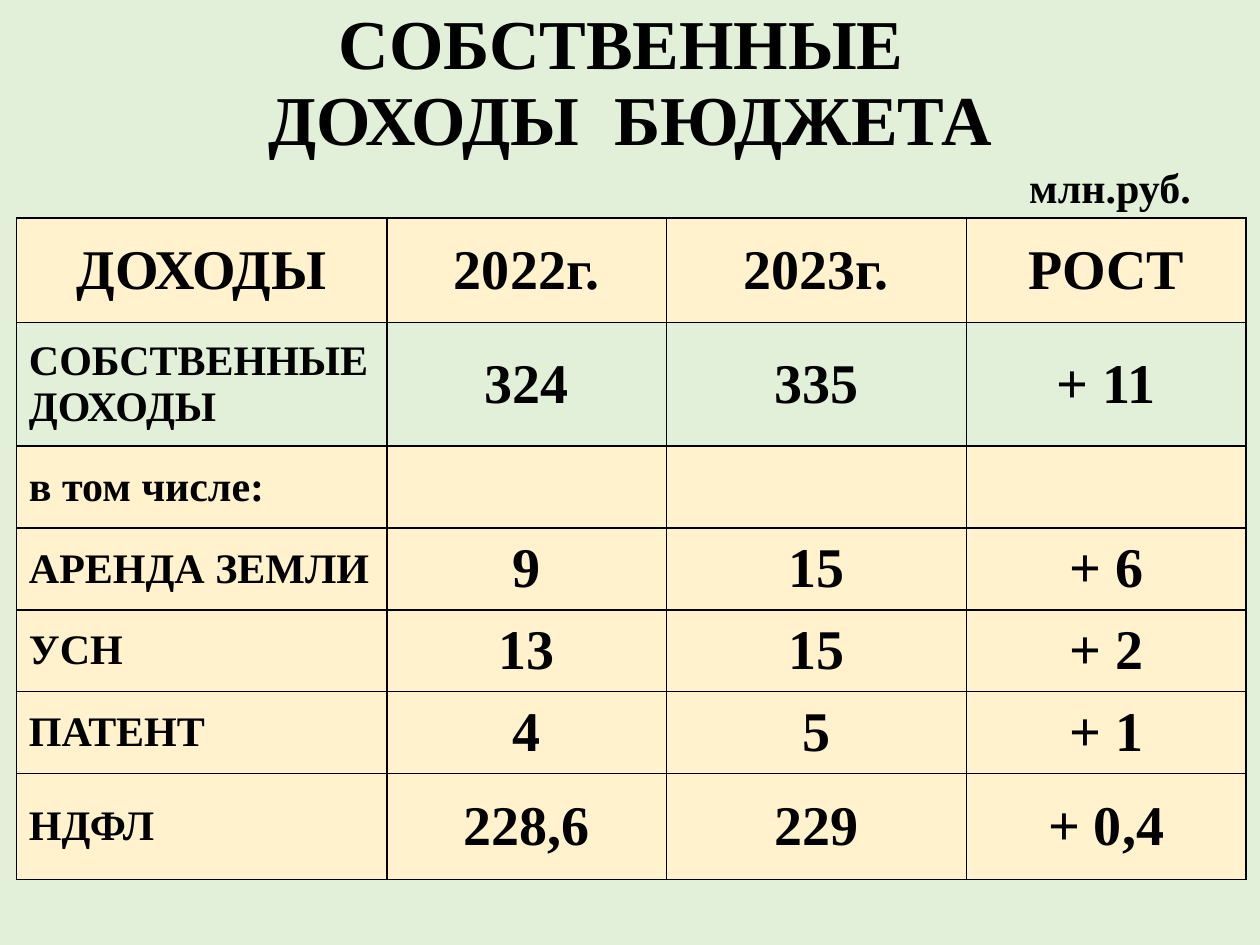
from lxml.etree import SubElement
from pptx import Presentation
from pptx.dml.color import RGBColor
from pptx.enum.text import MSO_ANCHOR as Anchor, MSO_AUTO_SIZE as AutoSize, PP_ALIGN as Align
from pptx.oxml.ns import qn
from pptx.util import Inches, Pt

TITLE = "СОБСТВЕННЫЕ \nДОХОДЫ  БЮДЖЕТА"
UNIT = "млн.руб."
INCOME = [
    ("ДОХОДЫ", "2022г.", "2023г.", "РОСТ"),
    ("СОБСТВЕННЫЕ ДОХОДЫ", "324", "335", "+ 11"),
    ("в том числе:", "", "", ""),
    ("АРЕНДА ЗЕМЛИ", "9", "15", "+ 6"),
    ("УСН", "13", "15", "+ 2"),
    ("ПАТЕНТ", "4", "5", "+ 1"),
    ("НДФЛ", "228,6", "229", "+ 0,4"),
]
HEADER_ROW, TOTAL_ROW = 0, 1
COLUMN_WIDTHS = [2.94, 2.22, 2.38, 2.22]
ROW_HEIGHTS = [0.83, 0.98, 0.65, 0.65, 0.65, 0.65, 0.84]
COLORS = {"green": "E2F0D9", "cream": "FFF2CC", "black": "000000"}
FONT = "Times New Roman"


def paint(fill, color):
    fill.solid()
    fill.fore_color.rgb = RGBColor.from_string(COLORS[color])


def write(frame, text, size=24, align=Align.LEFT, anchor=Anchor.MIDDLE, spacing=None):
    frame.vertical_anchor = anchor
    paragraph = frame.paragraphs[0]
    paragraph.text = text
    paragraph.alignment = align
    paragraph.line_spacing = spacing
    for run in paragraph.runs:
        run.font.name = FONT
        run.font.size = Pt(size)
        run.font.bold = True
        run.font.color.rgb = RGBColor.from_string(COLORS["black"])


def add_borders(cell):
    """Draw the four cell borders; call before filling, as lines precede the fill in XML."""
    properties = cell._tc.get_or_add_tcPr()
    for side in ("a:lnL", "a:lnR", "a:lnT", "a:lnB"):
        line = SubElement(properties, qn(side), w=str(Pt(1)))
        solid = SubElement(line, qn("a:solidFill"))
        SubElement(solid, qn("a:srgbClr"), val=COLORS["black"])


def add_income_table(slide):
    table = slide.shapes.add_table(
        len(INCOME), len(COLUMN_WIDTHS), Inches(0.13), Inches(1.73),
        Inches(sum(COLUMN_WIDTHS)), Inches(sum(ROW_HEIGHTS))).table
    for column, width in zip(table.columns, COLUMN_WIDTHS):
        column.width = Inches(width)
    for row, height in zip(table.rows, ROW_HEIGHTS):
        row.height = Inches(height)
    for r, values in enumerate(INCOME):
        for c, value in enumerate(values):
            cell = table.cell(r, c)
            add_borders(cell)
            paint(cell.fill, "green" if r == TOTAL_ROW else "cream")
            cell.vertical_anchor = Anchor.MIDDLE
            is_label = c == 0 and r != HEADER_ROW
            if value:
                write(cell.text_frame, value, size=24 if is_label else 32,
                      align=Align.LEFT if is_label else Align.CENTER)


def main():
    deck = Presentation()
    deck.slide_width, deck.slide_height = Inches(10), Inches(7.5)
    slide = deck.slides.add_slide(deck.slide_layouts.get_by_name("Title Only"))
    paint(slide.background.fill, "green")

    title = slide.shapes.title
    title.left, title.top = Inches(0), Inches(-0.04)
    title.width, title.height = Inches(10), Inches(1.43)
    write(title.text_frame, TITLE, size=40, align=Align.CENTER, spacing=0.9)

    add_income_table(slide)

    unit = slide.shapes.add_textbox(Inches(8.07), Inches(1.23), Inches(1.5), Inches(0.5))
    unit.text_frame.word_wrap = False
    unit.text_frame.auto_size = AutoSize.SHAPE_TO_FIT_TEXT
    write(unit.text_frame, UNIT, anchor=Anchor.TOP)

    deck.save("out.pptx")


if __name__ == "__main__":
    main()
